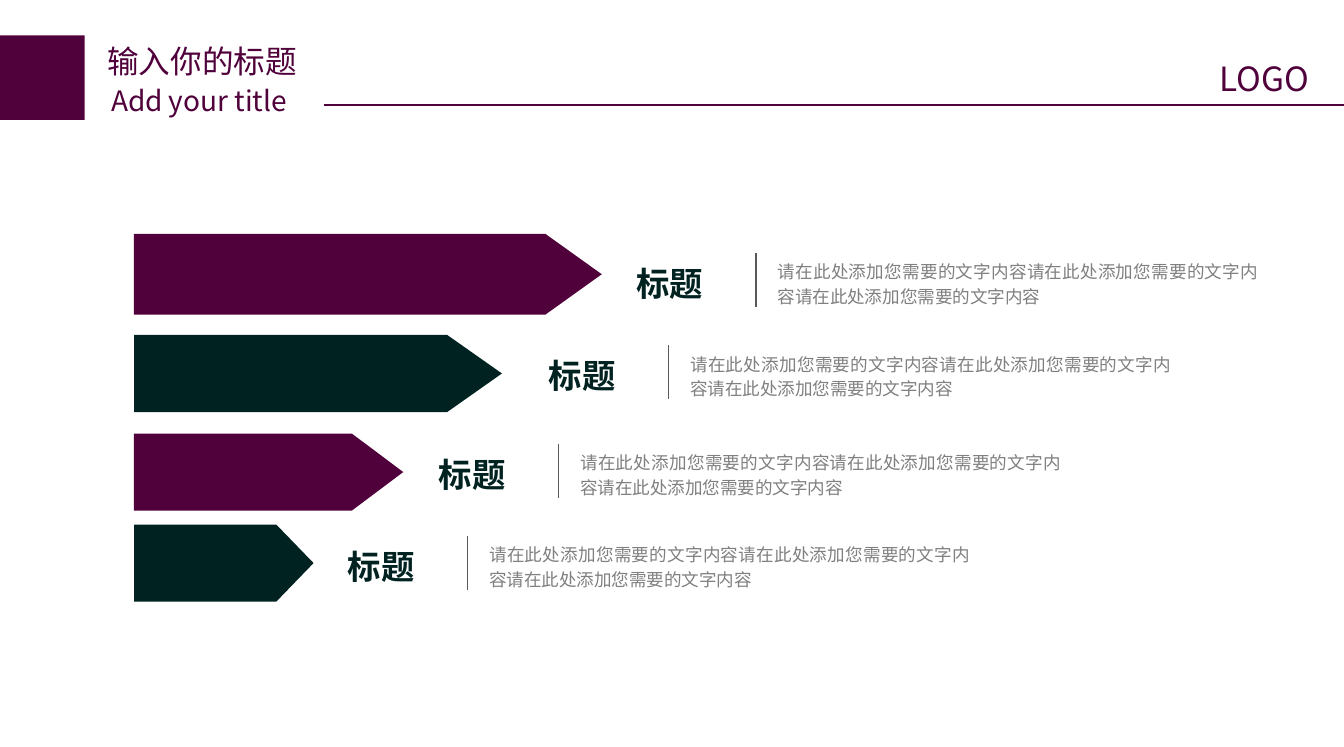
import pptx
import pptx.util
import pptx.dml.color
import pptx.enum.shapes
import pptx.enum.text
import pptx.oxml
from pptx.oxml import ns

Inches = pptx.util.Inches
Pt = pptx.util.Pt
RGBColor = pptx.dml.color.RGBColor
MSO_SHAPE = pptx.enum.shapes.MSO_SHAPE
PP_ALIGN = pptx.enum.text.PP_ALIGN

PLUM = RGBColor(0x50, 0x00, 0x3B)
DARK_GREEN = RGBColor(0x00, 0x22, 0x21)
GREY = RGBColor(0x80, 0x80, 0x80)
RULE_GREY = RGBColor(0x59, 0x59, 0x59)

BODY = "请在此处添加您需要的文字内容" * 3
ARROW_LEFT = 1.06
ROWS = [
    (1.85, 3.7, 0.64, 0.698, PLUM, 5.98, 2.0),
    (2.65, 2.91, 0.61, 0.709, DARK_GREEN, 5.29, 2.73),
    (3.43, 2.13, 0.61, 0.667, PLUM, 4.42, 3.51),
    (4.15, 1.42, 0.61, 0.483, DARK_GREEN, 3.7, 4.24),
]


class Deck:
    font = "Noto Sans CJK SC"
    body_font = "Arial"

    def __init__(self, width, height):
        self.prs = pptx.Presentation()
        self.prs.slide_width = Inches(width)
        self.prs.slide_height = Inches(height)
        self.s = self.prs.slides.add_slide(self.prs.slide_layouts[6])

    def shape(self, kind, x, y, w, h, color, adj=None):
        sp = self.s.shapes.add_shape(kind, Inches(x), Inches(y), Inches(w), Inches(h))
        sp.shadow.inherit = False
        sp.fill.solid()
        sp.fill.fore_color.rgb = color
        sp.line.fill.background()
        if adj is not None:
            sp.adjustments[0] = adj

    def line(self, x1, y1, x2, y2, color):
        cx = self.s.shapes.add_connector(
            pptx.enum.shapes.MSO_CONNECTOR.STRAIGHT,
            Inches(x1), Inches(y1), Inches(x2), Inches(y2))
        cx.line.color.rgb = color
        cx.line.width = Pt(0.75)
        cx._element.spPr.append(pptx.oxml.parse_xml(
            f"<a:effectLst {ns.nsdecls('a')}/>"))

    def text(self, x, y, w, h, text, size, color, font=None, bold=False,
             align=PP_ALIGN.LEFT, spacing=None, inset=None, wrap=True):
        tf = self.s.shapes.add_textbox(
            Inches(x), Inches(y), Inches(w), Inches(h)).text_frame
        tf.word_wrap = wrap
        tf.auto_size = pptx.enum.text.MSO_AUTO_SIZE.SHAPE_TO_FIT_TEXT
        if inset is not None:
            tf.margin_left = tf.margin_right = Inches(inset)
            tf.margin_top = tf.margin_bottom = Inches(inset)
        p = tf.paragraphs[0]
        p.alignment = align
        if spacing:
            p.line_spacing = Pt(spacing)
        r = p.add_run()
        r.text = text
        r.font.size = Pt(size)
        r.font.bold = bold
        r.font.color.rgb = color
        r.font.name = font or self.font
        r._r.get_or_add_rPr().append(pptx.oxml.parse_xml(
            f'<a:ea {ns.nsdecls("a")} typeface="{self.font}"/>'))

    def header(self):
        self.shape(MSO_SHAPE.RECTANGLE, 0, 0.28, 0.67, 0.67, PLUM)
        self.text(0.75, 0.28, 1.73, 0.4, "输入你的标题", 18, PLUM)
        self.text(0.78, 0.61, 1.73, 0.37, "Add your title", 16, PLUM)
        self.line(2.56, 0.83, 10.63, 0.83, PLUM)
        self.text(9.55, 0.41, 0.96, 0.42, "LOGO", 19, PLUM, wrap=False)

    def row(self, y, width, height, adj, color, rule_x, rule_y):
        self.shape(MSO_SHAPE.PENTAGON, ARROW_LEFT, y, width, height, color, adj)
        self.text(rule_x - 1.23, rule_y + 0.03, 1.09, 0.42, "标题", 19,
                  DARK_GREEN, bold=True, align=PP_ALIGN.CENTER)
        self.line(rule_x, rule_y, rule_x, rule_y + 0.43, RULE_GREY)
        self.text(rule_x + 0.17, rule_y + 0.04, 3.8, 0.39, BODY, 10, GREY,
                  font=self.body_font, align=PP_ALIGN.JUSTIFY, spacing=14, inset=0)


def main():
    deck = Deck(10.63, 5.91)
    deck.header()
    for row in ROWS:
        deck.row(*row)
    deck.prs.save("out.pptx")


if __name__ == "__main__":
    main()
